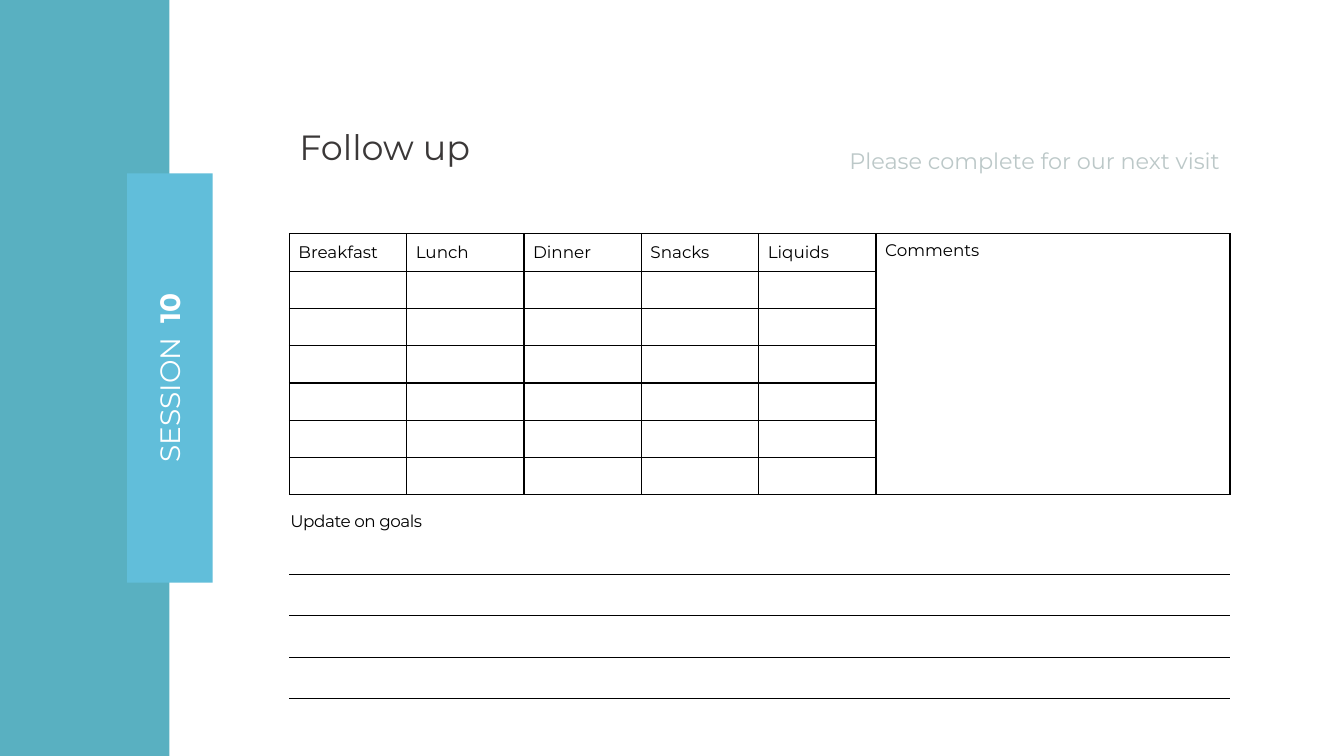
import pptx
import pptx.dml.color
import pptx.enum.shapes
import pptx.enum.text
import pptx.oxml
import pptx.oxml.ns
import pptx.util

Inches = pptx.util.Inches
Pt = pptx.util.Pt
ALIGN = pptx.enum.text.PP_ALIGN
ANCHOR = pptx.enum.text.MSO_ANCHOR
LEFT, TOP, WIDTH = 2.87, 2.32, 9.33
HEADS = ["Breakfast", "Lunch", "Dinner", "Snacks", "Liquids"]


def color(code):
    return pptx.dml.color.RGBColor.from_string(code)


class Page:
    font = "Montserrat"
    black = "000000"
    white = "FFFFFF"

    def __init__(self, deck):
        self.slide = deck.slides.add_slide(deck.slide_layouts[5])
        self.shapes = self.slide.shapes

    def style(self, run, size, code, bold=False, space=0):
        """Format a run; space is the letter spacing in points."""
        run.font.name = self.font
        run.font.size = Pt(size)
        run.font.bold = bold
        run.font.color.rgb = color(code)
        if space:
            run.font._element.set("spc", str(round(space * 100)))

    def place(self, shape, box):
        shape.left, shape.top, shape.width, shape.height = map(Inches, box)

    def block(self, box, code):
        shape = self.shapes.add_shape(
            pptx.enum.shapes.MSO_SHAPE.RECTANGLE, *map(Inches, box))
        shape.shadow.inherit = False
        shape.fill.solid()
        shape.fill.fore_color.rgb = color(code)
        shape.line.fill.background()

    def title(self, box, text, size, code):
        shape = self.shapes.title
        self.place(shape, box)
        frame = shape.text_frame
        frame.text = text
        frame.auto_size = pptx.enum.text.MSO_AUTO_SIZE.NONE
        frame.vertical_anchor = ANCHOR.TOP
        frame.paragraphs[0].alignment = ALIGN.LEFT
        self.style(frame.paragraphs[0].runs[0], size, code)

    def text(self, box, text, size, code, align=ALIGN.LEFT, wrap=True, space=0):
        shape = self.shapes.add_textbox(*map(Inches, box))
        frame = shape.text_frame
        frame.word_wrap = wrap
        frame.text = text
        line = frame.paragraphs[0]
        line.alignment = align
        self.style(line.runs[0], size, code, space=space)
        return shape

    def border(self, cell, sides):
        """Draw black lines on the given sides (of LRTB) and none elsewhere."""
        props = cell._tc.get_or_add_tcPr()
        for side in "LRTB":
            line = pptx.oxml.parse_xml(
                f'<a:ln{side} {pptx.oxml.ns.nsdecls("a")} w="12700"/>')
            kind = "solidFill" if side in sides else "noFill"
            fill = line.makeelement(pptx.oxml.ns.qn("a:" + kind), {})
            if side in sides:
                fill.append(fill.makeelement(
                    pptx.oxml.ns.qn("a:srgbClr"), {"val": self.black}))
            line.append(fill)
            props.append(line)

    def table(self, left, top, cols, rows, high, sides):
        """Add an unfilled table; cols lists the column widths."""
        grid = self.shapes.add_table(
            rows, len(cols), Inches(left), Inches(top),
            Inches(sum(cols)), Inches(rows * high)).table
        grid.first_row = grid.horz_banding = False
        for col, wide in zip(grid.columns, cols):
            col.width = Inches(wide)
        for row in grid.rows:
            row.height = Inches(high)
        for cell in grid.iter_cells():
            cell.margin_left = Inches(0.09)
            cell.margin_right = cell.margin_top = cell.margin_bottom = 0
            self.border(cell, sides)
            cell.fill.background()
        return grid

    def label(self, cell, text, anchor=ANCHOR.MIDDLE):
        cell.text = text
        cell.vertical_anchor = anchor
        self.style(cell.text_frame.paragraphs[0].runs[0], 12, self.black)


def main():
    deck = pptx.Presentation()
    deck.slide_width, deck.slide_height = Inches(13.33), Inches(7.5)
    page = Page(deck)

    page.block((0, 0, 1.68, 7.5), "59B0C1")
    page.block((1.26, 1.72, 0.85, 4.06), "61BEDA")
    tab = page.text((0.73, 3.53, 1.9, 0.44), "SESSION", 20, page.white,
                    ALIGN.CENTER, wrap=False)
    tab.rotation = 270
    line = tab.text_frame.paragraphs[0]
    gap, number = line.add_run(), line.add_run()
    gap.text, number.text = " ", "10"
    page.style(gap, 20, page.white, space=5)
    page.style(number, 20, page.white, bold=True)

    page.title((LEFT, 1.19, 2.91, 0.52), "Follow up", 25, "3B3838")
    hint = page.text((8.21, 1.19, 3.99, 0.52),
                     "Please complete for our next visit", 16, "BCC8C8",
                     ALIGN.RIGHT)
    hint.text_frame.paragraphs[0].line_spacing = Pt(35)

    meals = page.table(LEFT, TOP, [1.164] * len(HEADS) + [3.51], 7, 0.37, "LRTB")
    for col, head in enumerate(HEADS):
        page.label(meals.cell(0, col), head)
    notes = meals.cell(0, len(HEADS))
    notes.merge(meals.cell(6, len(HEADS)))
    notes.margin_top = Inches(0.06)
    page.label(notes, "Comments", ANCHOR.TOP)

    goals = page.text((LEFT, 5.07, 2.2, 0.16), "Update on goals", 12,
                      page.black, space=-0.3).text_frame
    goals.margin_left = Inches(0.01)
    goals.margin_right = goals.margin_top = goals.margin_bottom = 0
    page.table(LEFT, 5.7, [WIDTH], 3, 0.41, "TB")

    deck.save("out.pptx")


if __name__ == "__main__":
    main()
